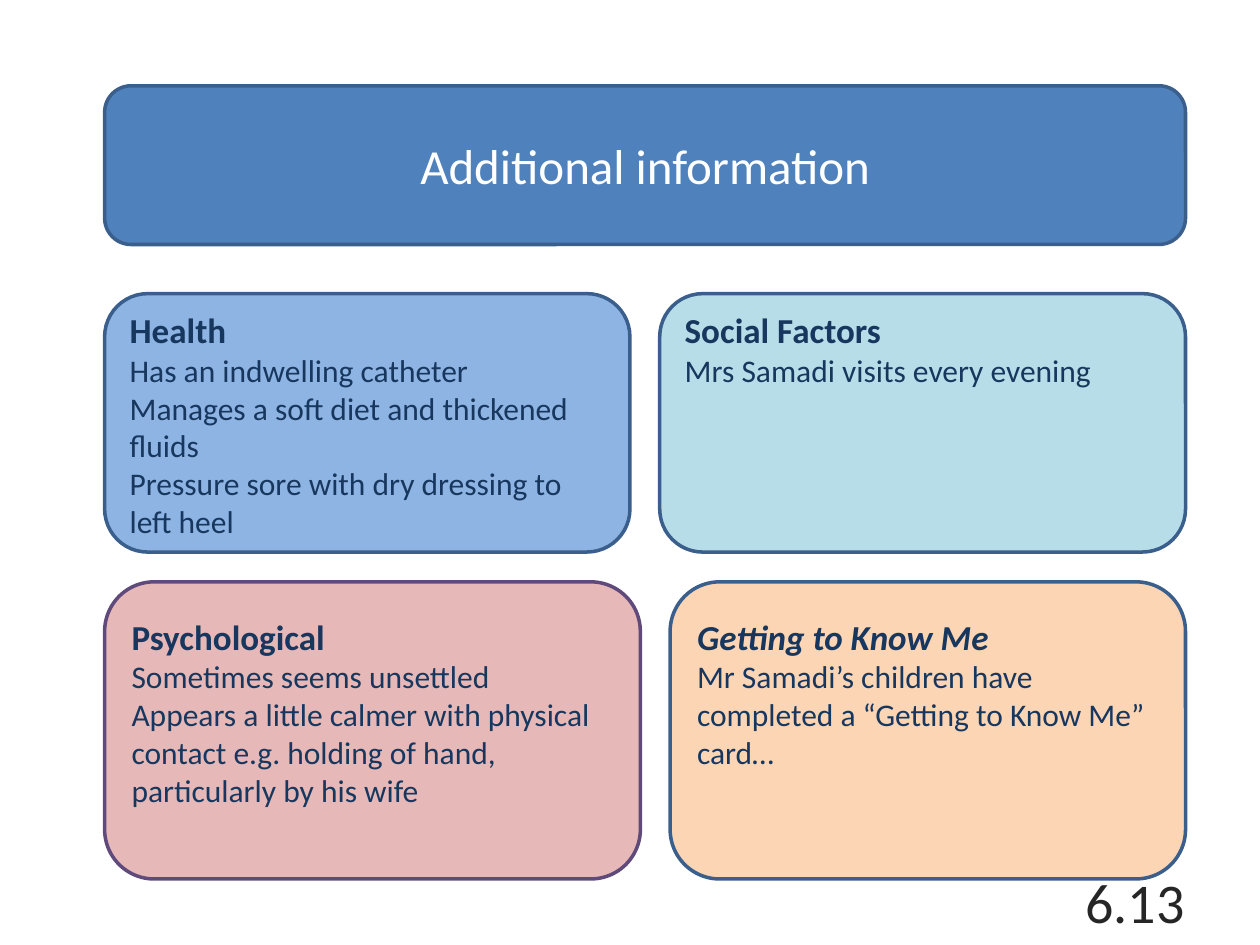
from dataclasses import dataclass

from pptx import Presentation
from pptx.dml.color import RGBColor
from pptx.enum.shapes import MSO_SHAPE
from pptx.enum.text import MSO_ANCHOR, MSO_AUTO_SIZE, PP_ALIGN
from pptx.util import Cm, Pt


@dataclass(frozen=True)
class Theme:
    font: str = "Calibri"
    white: str = "FFFFFF"
    ink: str = "17375E"
    grey: str = "262626"
    banner: str = "4F81BD"
    edge: str = "3A5F8C"
    violet: str = "604A7B"
    blue: str = "8EB4E3"
    aqua: str = "B7DEE8"
    rose: str = "E6B9B8"
    peach: str = "FCD5B5"
    title: int = 28
    head: int = 20
    body: int = 18
    page: int = 32
    stroke: int = 2


LEFT, WIDTH, GAP = 2.11, 21.79, 0.6

# Each row: top, height, width of the left card, top inset, cards.
# Each card: fill, edge, heading, italic heading, lines.
ROWS = [
    (5.92, 5.21, 10.59, 0.05, [
        ("blue", "edge", "Health", False, [
            "Has an indwelling catheter",
            "Manages a soft diet and thickened fluids",
            "Pressure sore with dry dressing to left heel"]),
        ("aqua", "edge", "Social Factors", False, [
            "Mrs Samadi visits every evening"]),
    ]),
    (11.73, 5.99, 10.8, 0.38, [
        ("rose", "violet", "Psychological", False, [
            "Sometimes seems unsettled",
            "Appears a little calmer with physical contact e.g. holding "
            "of hand, particularly by his wife"]),
        ("peach", "edge", "Getting to Know Me", True, [
            "Mr Samadi’s children have completed a “Getting to Know Me” "
            "card…"]),
    ]),
]


class Deck:
    def __init__(self, theme):
        self.theme = theme
        self.show = Presentation()
        self.show.slide_width, self.show.slide_height = Cm(25.4), Cm(19.05)
        self.slide = self.show.slides.add_slide(self.show.slide_layouts[5])

    def color(self, name):
        return RGBColor.from_string(getattr(self.theme, name))

    def text(self, para, words, size, color, align=PP_ALIGN.LEFT,
             bold=False, italic=False):
        para.alignment = align
        run = para.add_run()
        run.text = words
        font = run.font
        font.name, font.size = self.theme.font, Pt(size)
        font.bold, font.italic = bold, italic
        font.color.rgb = self.color(color)

    def panel(self, box, fill, edge):
        shape = self.slide.shapes.add_shape(
            MSO_SHAPE.ROUNDED_RECTANGLE, *map(Cm, box))
        shape.shadow.inherit = False
        shape.fill.solid()
        shape.fill.fore_color.rgb = self.color(fill)
        shape.line.color.rgb = self.color(edge)
        shape.line.width = Pt(self.theme.stroke)
        return shape

    def title(self, box, words):
        """Set the title placeholder in front of a rounded banner."""
        banner = self.panel(box, "banner", "edge")
        title = self.slide.shapes.title
        banner._element.addnext(title._element)
        title.left, title.top, title.width, title.height = map(Cm, box)
        frame = title.text_frame
        frame.auto_size = MSO_AUTO_SIZE.NONE
        frame.vertical_anchor = MSO_ANCHOR.MIDDLE
        self.text(frame.paragraphs[0], words, self.theme.title, "white",
                  PP_ALIGN.CENTER)

    def card(self, box, inset, fill, edge, head, slant, lines):
        frame = self.panel(box, fill, edge).text_frame
        frame.word_wrap = True
        frame.vertical_anchor = MSO_ANCHOR.TOP
        frame.margin_top = Cm(inset)
        self.text(frame.paragraphs[0], head, self.theme.head, "ink",
                  bold=True, italic=slant)
        for line in lines:
            self.text(frame.add_paragraph(), line, self.theme.body, "ink")

    def page(self, box, words):
        frame = self.slide.shapes.add_textbox(*map(Cm, box)).text_frame
        frame.word_wrap = True
        frame.vertical_anchor = MSO_ANCHOR.MIDDLE
        self.text(frame.paragraphs[0], words, self.theme.page, "grey",
                  PP_ALIGN.RIGHT)


def main():
    deck = Deck(Theme())
    deck.title((LEFT, 1.73, WIDTH, 3.2), "Additional information")
    for top, height, first, inset, cards in ROWS:
        left = LEFT
        for card, width in zip(cards, (first, WIDTH - GAP - first)):
            deck.card((left, top, width, height), inset, *card)
            left += width + GAP
    deck.page((18.21, 17.65, 5.92, 1.02), "6.13")
    deck.show.save("out.pptx")


if __name__ == "__main__":
    main()
